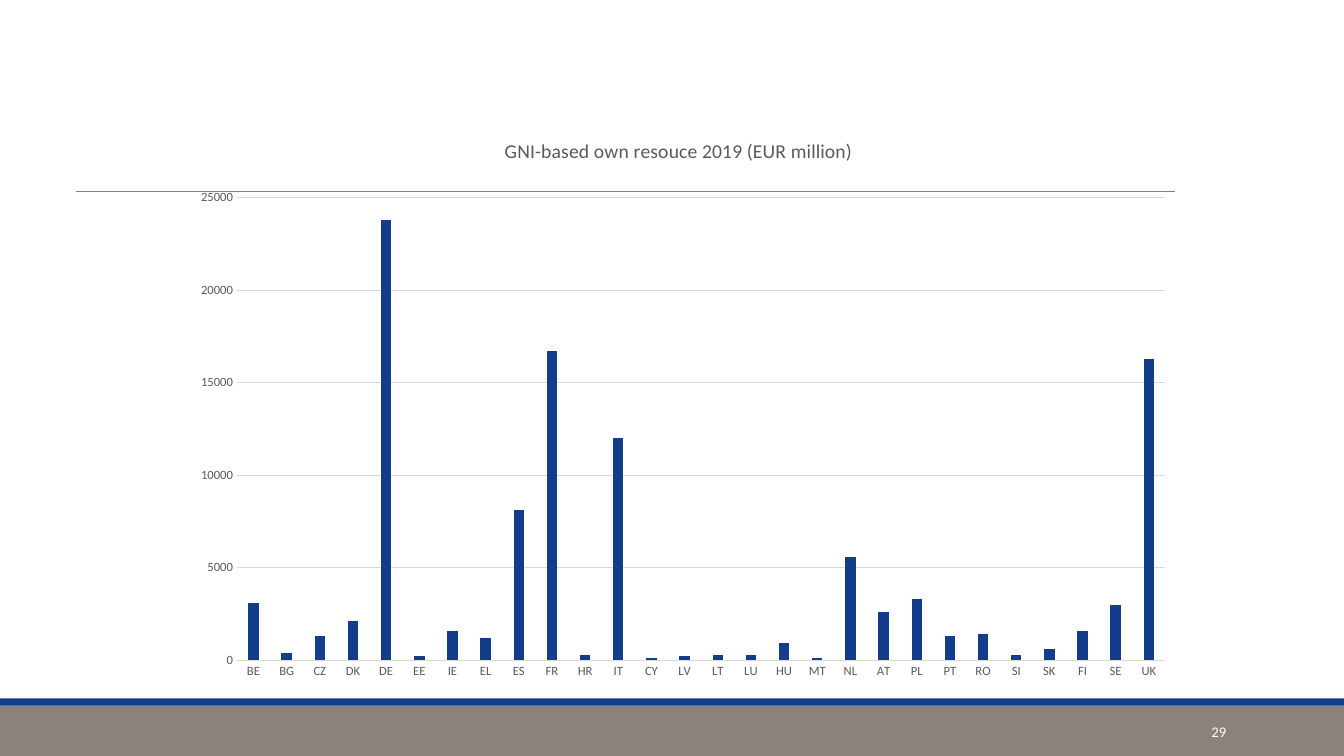
from dataclasses import dataclass
from typing import Any

import pptx
import pptx.chart.data
import pptx.dml.color
import pptx.enum.chart
import pptx.enum.shapes
import pptx.enum.text
import pptx.oxml
import pptx.oxml.ns
import pptx.util

SCALE = 9144


@dataclass(frozen=True)
class Theme:
    face: str = "Calibri"
    blue: str = "133C8B"
    taupe: str = "8B827B"
    rule: str = "808080"
    grid: str = "D9D9D9"
    text: str = "595959"
    white: str = "FFFFFF"
    head: float = 14
    page: float = 10.5
    tick: float = 9


@dataclass(frozen=True)
class Box:
    left: int
    top: int
    width: int
    height: int

    def emu(self) -> list[int]:
        return [n * SCALE for n in (self.left, self.top, self.width, self.height)]


@dataclass(frozen=True)
class Band:
    box: Box
    fill: str


THEME = Theme()
BANDS = [
    Band(Box(0, 700, 1333, 50), THEME.taupe),
    Band(Box(0, 693, 1333, 7), THEME.blue),
]
TITLE = "GNI-based own resouce 2019 (EUR million)"
DUES = {
    "BE": 3100, "BG": 400, "CZ": 1300, "DK": 2100, "DE": 23800, "EE": 200, "IE": 1600,
    "EL": 1200, "ES": 8100, "FR": 16700, "HR": 300, "IT": 12000, "CY": 100, "LV": 200,
    "LT": 300, "LU": 300, "HU": 900, "MT": 100, "NL": 5600, "AT": 2600, "PL": 3300,
    "PT": 1300, "RO": 1400, "SI": 300, "SK": 600, "FI": 1600, "SE": 3000, "UK": 16300,
}
CHART = Box(179, 123, 996, 563)
PLOT = Box(235, 196, 921, 459)
HEAD = Box(497, 133, 346, 24)


def apply(item: Any, form: dict[str, Any]) -> None:
    for name, value in form.items():
        setattr(item, name, value)


def tint(code: str) -> pptx.dml.color.RGBColor:
    return pptx.dml.color.RGBColor.from_string(code)


def style(font: Any, size: float, shade: str) -> None:
    apply(font, {"name": THEME.face, "size": pptx.util.Pt(size), "bold": False})
    font.color.rgb = tint(shade)


def stroke(line: Any, shade: str, width: float) -> None:
    line.color.rgb = tint(shade)
    line.width = pptx.util.Pt(width)


def draw_band(slide: Any, band: Band) -> None:
    shape = slide.shapes.add_shape(pptx.enum.shapes.MSO_SHAPE.RECTANGLE, *band.box.emu())
    shape.shadow.inherit = False
    shape.fill.solid()
    shape.fill.fore_color.rgb = tint(band.fill)
    shape.line.fill.background()


def draw_rule(slide: Any, left: int, right: int, top: int) -> None:
    ends = [n * SCALE for n in (left, top, right, top)]
    rule = slide.shapes.add_connector(pptx.enum.shapes.MSO_CONNECTOR.STRAIGHT, *ends)
    stroke(rule.line, THEME.rule, 0.5)
    rule._element.spPr.append(pptx.oxml.parse_xml(
        f"<a:effectLst {pptx.oxml.ns.nsdecls('a')}/>"))


def place(part: Any, spot: int, box: Box, sized: bool) -> None:
    for old in part.findall(pptx.oxml.ns.qn("c:layout")):
        part.remove(old)
    sides = {"x": (box.left - CHART.left) / CHART.width,
             "y": (box.top - CHART.top) / CHART.height}
    inner = '<c:layoutTarget val="inner"/>' if sized else ""
    inner += "".join(f'<c:{side}Mode val="edge"/>' for side in sides)
    if sized:
        sides |= {"w": box.width / CHART.width, "h": box.height / CHART.height}
    inner += "".join(f'<c:{side} val="{value:.4f}"/>' for side, value in sides.items())
    part.insert(spot, pptx.oxml.parse_xml(
        f"<c:layout {pptx.oxml.ns.nsdecls('c')}>"
        f"<c:manualLayout>{inner}</c:manualLayout></c:layout>"))


def draw_chart(slide: Any) -> None:
    data = pptx.chart.data.CategoryChartData()
    data.categories = list(DUES)
    data.add_series(TITLE, list(DUES.values()))
    kind = pptx.enum.chart.XL_CHART_TYPE.COLUMN_CLUSTERED
    chart = slide.shapes.add_chart(kind, *CHART.emu(), data).chart
    apply(chart, {"has_legend": False, "has_title": True})
    style(chart.font, THEME.tick, THEME.text)
    frame = chart.chart_title.text_frame
    frame.text = TITLE
    style(frame.paragraphs[0].runs[0].font, THEME.head, THEME.text)
    chart.chart_title.include_in_layout = False
    plot = chart.plots[0]
    apply(plot, {"gap_width": 219, "overlap": -27, "vary_by_categories": False})
    fill = plot.series[0].format.fill
    fill.solid()
    fill.fore_color.rgb = tint(THEME.blue)
    none = pptx.enum.chart.XL_TICK_MARK.NONE
    for axis in (chart.category_axis, chart.value_axis):
        apply(axis, {"major_tick_mark": none, "minor_tick_mark": none})
        style(axis.tick_labels.font, THEME.tick, THEME.text)
    stroke(chart.category_axis.format.line, THEME.grid, 0.75)
    apply(chart.value_axis, {"minimum_scale": 0, "maximum_scale": 25000,
                             "major_unit": 5000, "has_major_gridlines": True})
    chart.value_axis.format.line.fill.background()
    stroke(chart.value_axis.major_gridlines.format.line, THEME.grid, 0.75)
    place(chart._chartSpace.chart.plotArea, 0, PLOT, True)
    place(chart.chart_title._element, 1, HEAD, False)


def draw_page(slide: Any, box: Box, text: str) -> None:
    frame = slide.shapes.add_textbox(*box.emu()).text_frame
    apply(frame, {"word_wrap": True, "text": text,
                  "vertical_anchor": pptx.enum.text.MSO_ANCHOR.MIDDLE})
    para = frame.paragraphs[0]
    para.alignment = pptx.enum.text.PP_ALIGN.RIGHT
    style(para.runs[0].font, THEME.page, THEME.white)


def main() -> None:
    deck = pptx.Presentation()
    apply(deck, {"slide_width": 1333 * SCALE, "slide_height": 750 * SCALE})
    slide = deck.slides.add_slide(deck.slide_layouts[6])
    for band in BANDS:
        draw_band(slide, band)
    draw_rule(slide, 75, 1165, 190)
    draw_chart(slide)
    draw_page(slide, Box(1083, 706, 143, 40), "29")
    deck.save("out.pptx")


if __name__ == "__main__":
    main()
